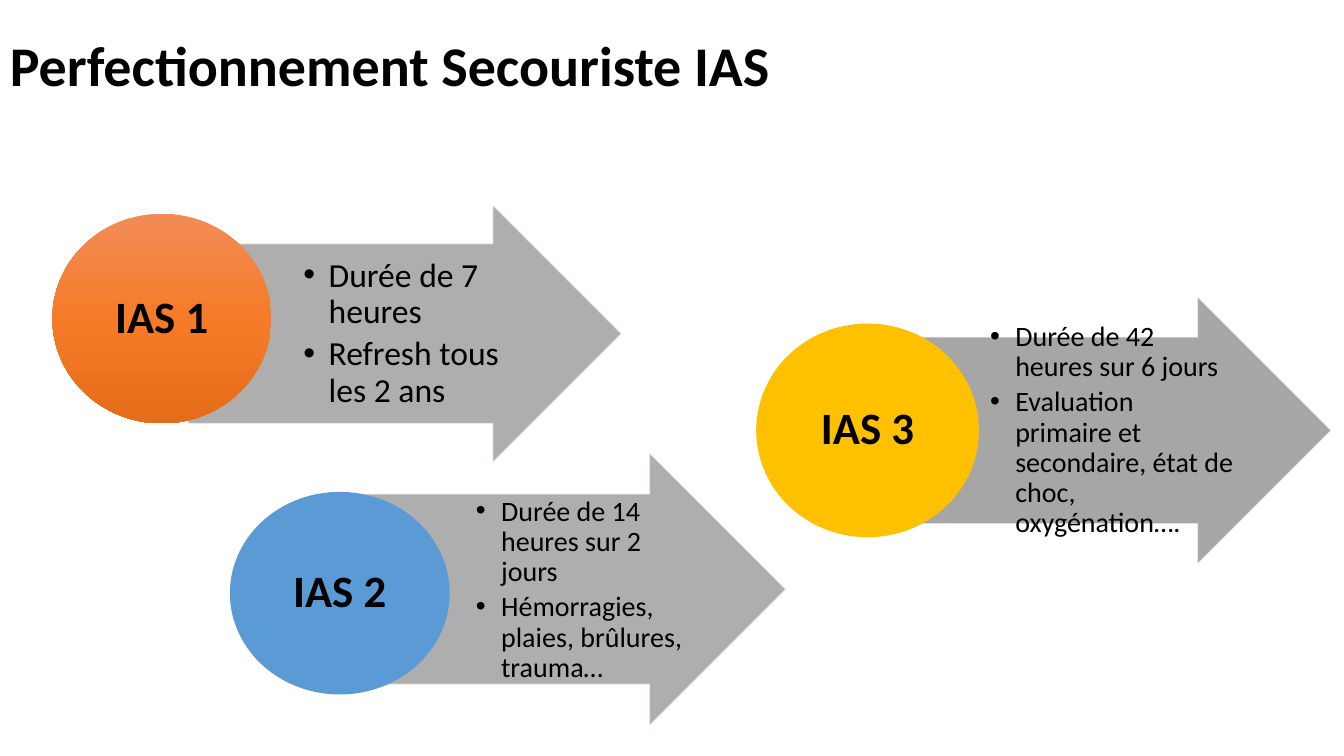
from copy import deepcopy

from pptx import Presentation
from pptx.dml.color import RGBColor
from pptx.enum.shapes import MSO_SHAPE as Shape
from pptx.enum.text import MSO_ANCHOR as Anchor, PP_ALIGN as Align
from pptx.oxml.ns import qn
from pptx.util import Inches, Pt
from lxml.etree import SubElement

BLACK = RGBColor(0x00, 0x00, 0x00)
GREY = RGBColor(0xA6, 0xA6, 0xA6)
BLUE = RGBColor(0x5B, 0x9B, 0xD5)
YELLOW = RGBColor(0xFF, 0xC0, 0x00)
ORANGES = [RGBColor(0xF1, 0x8C, 0x57), RGBColor(0xF6, 0x7B, 0x28), RGBColor(0xE5, 0x6C, 0x19)]
PINK_EDGE = RGBColor(0xF8, 0xD7, 0xCE)
ROSE_EDGE = RGBColor(0xED, 0xD9, 0xD7)
PALE_EDGE = RGBColor(0xE1, 0xE1, 0xE1)

# Each level: name, circle colours, arrow edge, arrow opacity,
# places of arrow, circle and points, text size, points
LEVELS = [
    ("IAS 1", ORANGES, PINK_EDGE, 90,
     (1.87, 2.04, 4.29, 2.54), (0.52, 2.12, 2.17, 2.08), (2.94, 2.42, 2.33, 1.78),
     24, ["Durée de 7 heures", "Refresh tous les 2 ans"]),
    ("IAS 2", [BLUE], ROSE_EDGE, 90,
     (3.61, 4.5, 4.18, 2.69), (2.28, 4.88, 2.18, 2.01), (4.65, 4.91, 2.19, 1.89),
     20, ["Durée de 14 heures sur 2 jours", "Hémorragies, plaies, brûlures, trauma…"]),
    ("IAS 3", [YELLOW], PALE_EDGE, 100,
     (8.6, 2.95, 4.6, 2.64), (7.5, 3.21, 2.21, 2.12), (9.75, 3.35, 2.53, 1.84),
     20, ["Durée de 42 heures sur 6 jours",
          "Evaluation primaire et secondaire, état de choc, oxygénation…."]),
]


class Page:
    """Holds the slide and its text style."""

    font = "Calibri"
    line_spacing = 0.9

    def __init__(self, slide):
        self.shapes = slide.shapes

    def fill_text(self, frame, lines, size, bold=False, align=Align.LEFT,
                  insets=(0.1, 0.05, 0.1, 0.05)):
        frame.word_wrap = True
        frame.vertical_anchor = Anchor.MIDDLE
        (frame.margin_left, frame.margin_top,
         frame.margin_right, frame.margin_bottom) = map(Inches, insets)
        frame.text = "\n".join(lines)
        for para in frame.paragraphs:
            para.alignment = align
            para.line_spacing = self.line_spacing
            for span in para.runs:
                span.font.name = self.font
                span.font.size = Pt(size)
                span.font.bold = bold
                span.font.color.rgb = BLACK

    def text(self, place, lines, size, **style):
        box = self.shapes.add_textbox(*map(Inches, place))
        self.fill_text(box.text_frame, lines, size, **style)
        return box

    def bullets(self, place, lines, size):
        box = self.text(place, lines, size, insets=(0.07, 0.02, 0.03, 0.02))
        for para in box.text_frame.paragraphs:
            para.space_after = Pt(round(size * 0.18, 1))
            props = para._p.get_or_add_pPr()
            props.set("marL", str(Inches(0.25)))
            props.set("indent", str(-Inches(0.25)))
            SubElement(props, qn("a:buFont")).set("typeface", "Arial")
            SubElement(props, qn("a:buChar")).set("char", "•")

    def arrow(self, place, edge, opacity):
        arrow = self.shapes.add_shape(Shape.RIGHT_ARROW, *map(Inches, place))
        arrow.shadow.inherit = False
        arrow.adjustments[0] = 0.7
        arrow.adjustments[1] = 0.5
        arrow.fill.solid()
        arrow.fill.fore_color.rgb = GREY
        arrow.line.color.rgb = edge
        arrow.line.width = Pt(0.5)
        fill_color, edge_color = arrow._element.spPr.iter(qn("a:srgbClr"))
        for color, percent in ((fill_color, opacity), (edge_color, 90)):
            SubElement(color, qn("a:alpha")).set("val", str(percent * 1000))

    def circle(self, place, label, colors):
        circle = self.shapes.add_shape(Shape.OVAL, *map(Inches, place))
        circle.shadow.inherit = False
        circle.line.fill.background()
        if len(colors) == 1:
            circle.fill.solid()
            circle.fill.fore_color.rgb = colors[0]
        else:
            self.shade(circle, colors)
        self.fill_text(circle.text_frame, [label], 32, bold=True, align=Align.CENTER,
                       insets=(0.02,) * 4)

    def shade(self, shape, colors):
        """Gradient from top to bottom with evenly spaced colours."""
        shape.fill.gradient()
        shape.fill.gradient_angle = 270
        stop_list = next(shape._element.spPr.iter(qn("a:gsLst")))
        while len(stop_list) < len(colors):
            stop_list.append(deepcopy(stop_list[0]))
        for index, (stop, color) in enumerate(zip(shape.fill.gradient_stops, colors)):
            stop.color.rgb = color
            stop.position = index / (len(colors) - 1)


def main():
    deck = Presentation()
    deck.slide_width = Inches(13.33)
    deck.slide_height = Inches(7.5)
    page = Page(deck.slides.add_slide(deck.slide_layouts[6]))

    # Title
    page.text((0, 0.29, 8.2, 0.78), ["Perfectionnement Secouriste IAS"], 40, bold=True)

    # Training levels
    for name, colors, edge, opacity, arrow, circle, points, size, lines in LEVELS:
        page.arrow(arrow, edge, opacity)
        page.bullets(points, lines, size)
        page.circle(circle, name, colors)

    deck.save("out.pptx")


if __name__ == "__main__":
    main()
